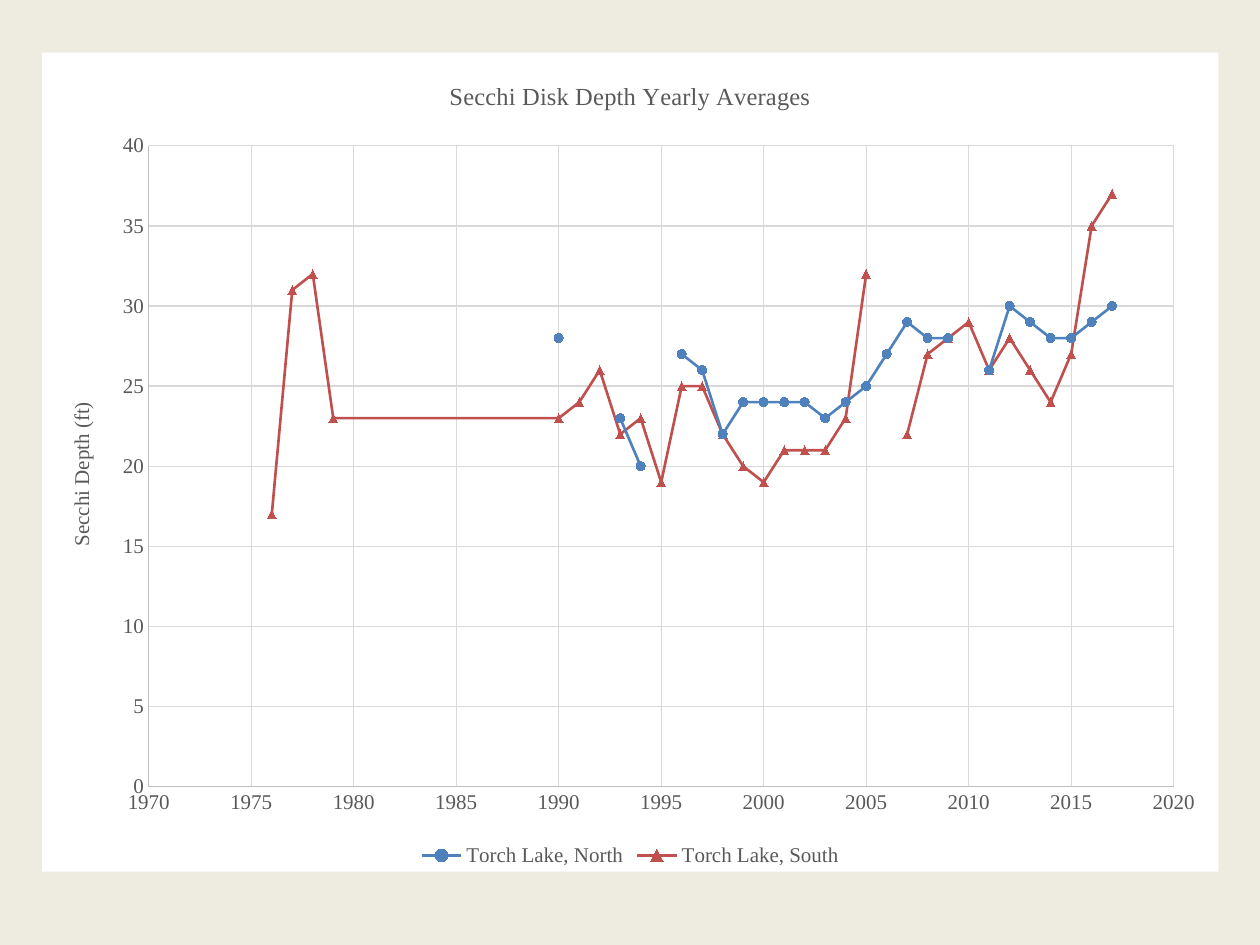
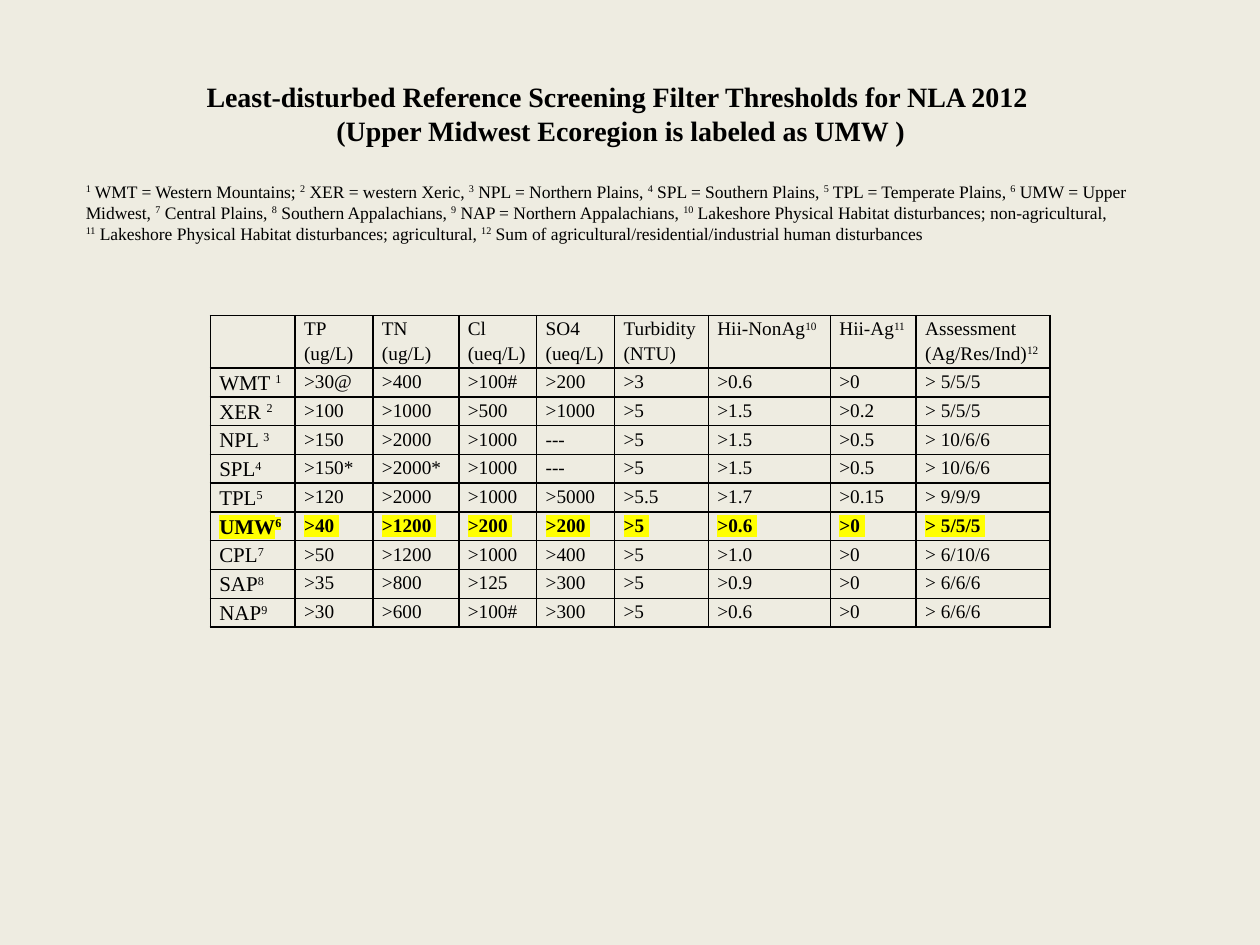
from lxml.etree import SubElement as Sub
from pptx import Presentation
from pptx.chart.data import XyChartData
from pptx.dml.color import RGBColor as Rgb
from pptx.enum.chart import XL_CHART_TYPE as Kind
from pptx.enum.chart import XL_LEGEND_POSITION as Side
from pptx.enum.chart import XL_MARKER_STYLE as Mark
from pptx.enum.chart import XL_TICK_MARK as Tick
from pptx.enum.text import MSO_ANCHOR as Anchor
from pptx.enum.text import MSO_AUTO_SIZE as Fit
from pptx.enum.text import PP_ALIGN as Align
from pptx.oxml import parse_xml
from pptx.oxml.ns import nsdecls, qn
from pptx.util import Cm, Pt

FONT = "Times New Roman"
HUES = {"back": "EEECE1", "white": "FFFFFF", "black": "000000",
        "grey": "595959", "axis": "BFBFBF", "grid": "D9D9D9",
        "north": "4F81BD", "south": "C0504D", "glow": "FFFF00"}

YEARS = [*range(1976, 1980), *range(1990, 2018)]
LAKES = [
    ("Torch Lake, North", "north", Mark.CIRCLE,
     [None, None, None, None, 28, None, None, 23, 20, None, 27,
      26, 22, 24, 24, 24, 24, 23, 24, 25, 27, 29,
      28, 28, None, 26, 30, 29, 28, 28, 29, 30]),
    ("Torch Lake, South", "south", Mark.TRIANGLE,
     [17, 31, 32, 23, 23, 24, 26, 22, 23, 19, 25,
      25, 22, 20, 19, 21, 21, 21, 23, 32, None, 22,
      27, 28, 29, 26, 28, 26, 24, 27, 35, 37]),
]
WIDE, HIGH = 23.71, 16.51
PLOT = {"x": 2.15 / WIDE, "y": 1.88 / HIGH,
        "w": 20.66 / WIDE, "h": 12.92 / HIGH}

HEAD = ["Least-disturbed Reference Screening Filter Thresholds for NLA 2012 ",
        "(Upper Midwest Ecoregion is labeled as UMW )"]
NOTES = [
    "^1^ WMT = Western Mountains; ^2^ XER = western Xeric, "
    "^3^ NPL = Northern Plains, ^4^ SPL = Southern Plains, "
    "^5^ TPL = Temperate Plains, ^6^ UMW = Upper Midwest, "
    "^7^ Central Plains, ^8^ Southern Appalachians, "
    "^9^ NAP = Northern Appalachians, "
    "^10^ Lakeshore Physical Habitat disturbances; non-agricultural,",
    "^11^ Lakeshore Physical Habitat disturbances; agricultural, "
    "^12^ Sum of agricultural/residential/industrial human disturbances",
]
ROWS = [
    ["", "TP (ug/L)", "TN (ug/L)", "Cl (ueq/L)", "SO4 (ueq/L)",
     "Turbidity (NTU)", "Hii-NonAg^10", "Hii-Ag^11",
     "Assessment\n(Ag/Res/Ind)^12"],
    ["WMT ^1", ">30@", ">400", ">100#", ">200", ">3", ">0.6", ">0", "> 5/5/5"],
    ["XER ^2", ">100", ">1000", ">500", ">1000", ">5", ">1.5", ">0.2", "> 5/5/5"],
    ["NPL ^3", ">150", ">2000", ">1000", "---", ">5", ">1.5", ">0.5", "> 10/6/6"],
    ["SPL^4", ">150*", ">2000*", ">1000", "---", ">5", ">1.5", ">0.5", "> 10/6/6"],
    ["TPL^5", ">120", ">2000", ">1000", ">5000", ">5.5", ">1.7", ">0.15", "> 9/9/9"],
    ["UMW^6", ">40 ", ">1200 ", ">200 ", ">200 ", ">5 ", ">0.6 ", ">0 ", "> 5/5/5 "],
    ["CPL^7", ">50", ">1200", ">1000", ">400", ">5", ">1.0", ">0", "> 6/10/6"],
    ["SAP^8", ">35", ">800", ">125", ">300", ">5", ">0.9", ">0", "> 6/6/6"],
    ["NAP^9", ">30", ">600", ">100#", ">300", ">5", ">0.6", ">0", "> 6/6/6"],
]
WIDTHS = [1.71, 1.57, 1.73, 1.57, 1.57, 1.89, 2.46, 1.73, 2.7]
TALL, LOW = 1.06, 0.58


def tint(name):
    return Rgb.from_string(HUES[name])


def style(font, size, hue="black", bold=False):
    font.name, font.size, font.bold = FONT, Pt(size), bold
    font.color.rgb = tint(hue)


def paint(fill, hue):
    fill.solid()
    fill.fore_color.rgb = tint(hue)


def stroke(line, hue, width):
    line.color.rgb = tint(hue)
    line.width = Pt(width)


def write(para, text, size, bold=False, glow=False):
    style(para.font, size, bold=bold)
    for i, part in enumerate(text.split("^")):
        if not part:
            continue
        run = para.add_run()
        run.text = part
        look = run.font._element
        if i % 2:
            look.set("baseline", "30000")
        if glow:
            Sub(Sub(look, qn("a:highlight")), qn("a:srgbClr"), val=HUES["glow"])


def new_slide(deck):
    slide = deck.slides.add_slide(deck.slide_layouts[6])
    paint(slide.background.fill, "back")
    return slide


def caption(title, text, size):
    para = title.text_frame.paragraphs[0]
    para.text = text
    style(para.font, size, "grey")


def set_axis(axis, low, high):
    axis.minimum_scale, axis.maximum_scale, axis.major_unit = low, high, 5
    axis.major_tick_mark = axis.minor_tick_mark = Tick.NONE
    axis.has_major_gridlines = True
    stroke(axis.major_gridlines.format.line, "grid", 0.75)
    stroke(axis.format.line, "axis", 0.75)
    style(axis.tick_labels.font, 12, "grey")
    axis.tick_labels.number_format = "0"
    axis.tick_labels.number_format_is_linked = False


def frame_chart(chart):
    root = chart.element
    for point in root.xpath('.//c:pt[c:v="None"]'):
        point.getparent().remove(point)
    for body in root.xpath(".//c:valAx/c:title//a:bodyPr"):
        body.set("rot", "-5400000")
        body.set("vert", "horz")
    area = root.xpath(".//c:plotArea")[0]
    for old in area.xpath("c:layout"):
        area.remove(old)
    sizes = "".join(f'<c:{k} val="{v:.4f}"/>' for k, v in PLOT.items())
    area.insert(0, parse_xml(
        f'<c:layout {nsdecls("c")}><c:manualLayout>'
        '<c:layoutTarget val="inner"/><c:xMode val="edge"/>'
        f'<c:yMode val="edge"/>{sizes}</c:manualLayout></c:layout>'))
    root.xpath("c:chart")[0].addnext(parse_xml(
        f'<c:spPr {nsdecls("c", "a")}><a:solidFill>'
        f'<a:srgbClr val="{HUES["white"]}"/></a:solidFill>'
        '<a:ln><a:noFill/></a:ln></c:spPr>'))


def add_depths(slide):
    data = XyChartData()
    for name, _, _, depths in LAKES:
        lake = data.add_series(name)
        for year, depth in zip(YEARS, depths):
            lake.add_data_point(year, depth)
    chart = slide.shapes.add_chart(Kind.XY_SCATTER_LINES, Cm(0.85), Cm(1.06),
                                   Cm(WIDE), Cm(HIGH), data).chart
    style(chart.font, 12)
    chart.has_title = True
    caption(chart.chart_title, "Secchi Disk Depth Yearly Averages", 14)
    set_axis(chart.category_axis, 1970, 2020)
    set_axis(chart.value_axis, 0, 40)
    caption(chart.value_axis.axis_title, "Secchi Depth (ft)", 12)
    chart.has_legend = True
    chart.legend.position = Side.BOTTOM
    chart.legend.include_in_layout = False
    style(chart.legend.font, 12, "grey")
    plot = chart.plots[0]
    plot.vary_by_categories = False
    for line, (_, hue, mark, _) in zip(plot.series, LAKES):
        line.smooth = False
        stroke(line.format.line, hue, 1.5)
        line.marker.style, line.marker.size = mark, 5
        paint(line.marker.format.fill, hue)
        stroke(line.marker.format.line, hue, 0.75)
    frame_chart(chart)


def edge(cell):
    props = cell._tc.get_or_add_tcPr()
    for side in "LRTB":
        line = Sub(props, qn(f"a:ln{side}"), w=str(Pt(1)))
        Sub(Sub(line, qn("a:solidFill")), qn("a:srgbClr"), val=HUES["black"])


def add_limits(slide):
    high = TALL + LOW * (len(ROWS) - 1)
    table = slide.shapes.add_table(len(ROWS), len(WIDTHS), Cm(4.24), Cm(6.36),
                                   Cm(sum(WIDTHS)), Cm(high)).table
    table.first_row = table.horz_banding = False
    for col, width in zip(table.columns, WIDTHS):
        col.width = Cm(width)
    for r, row in enumerate(ROWS):
        table.rows[r].height = Cm(LOW if r else TALL)
        key = row[0].startswith("UMW")
        for c, text in enumerate(row):
            cell = table.cell(r, c)
            cell.margin_left = cell.margin_right = Cm(0.18)
            cell.margin_top = cell.margin_bottom = 0
            edge(cell)
            cell.fill.background()
            frame = cell.text_frame
            for i, part in enumerate(text.split("\n")):
                para = frame.add_paragraph() if i else frame.paragraphs[0]
                para.line_spacing = 1.15
                write(para, part, 11 if c else 12, key, key)


def add_notes(slide):
    frame = slide.shapes.add_textbox(Cm(1.48), Cm(1.47), Cm(22.07),
                                     Cm(3.58)).text_frame
    frame.word_wrap = True
    frame.auto_size = Fit.SHAPE_TO_FIT_TEXT
    frame.vertical_anchor = Anchor.MIDDLE
    for i, text in enumerate(HEAD + NOTES):
        para = frame.add_paragraph() if i else frame.paragraphs[0]
        top = i < len(HEAD)
        para.alignment = Align.CENTER if top else Align.LEFT
        if i == len(HEAD):
            para.space_before = Pt(19.4)
        write(para, text, 16 if top else 10, top)


def main():
    deck = Presentation()
    deck.slide_width, deck.slide_height = Cm(25.4), Cm(19.05)
    add_depths(new_slide(deck))
    limits = new_slide(deck)
    add_limits(limits)
    add_notes(limits)
    deck.save("out.pptx")


if __name__ == "__main__":
    main()
